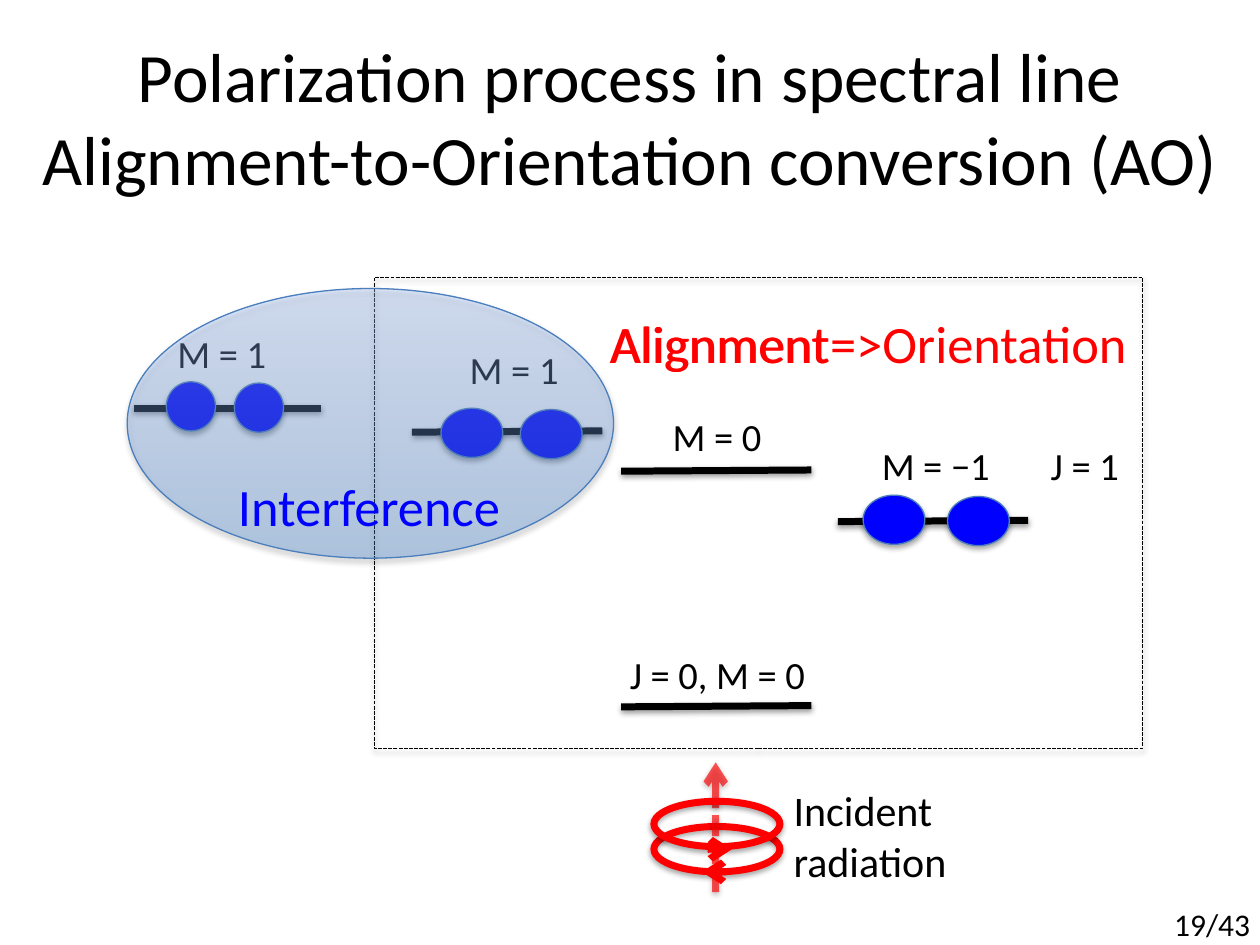
from lxml.etree import SubElement
from pptx import Presentation
from pptx.dml.color import RGBColor
from pptx.enum.dml import MSO_LINE_DASH_STYLE as DASH
from pptx.enum.shapes import MSO_CONNECTOR as CONNECTOR, MSO_SHAPE as SHAPE
from pptx.enum.text import MSO_ANCHOR as ANCHOR, PP_ALIGN as ALIGN
from pptx.oxml.ns import qn
from pptx.util import Inches, Pt

COLUMNS, ROWS = 100, 75
BLACK, RED, BLUE, EDGE = "000000", "FF0000", "0000FF", "4B7EBC"


def cells(*counts):
    """Turn counts of square grid cells into lengths."""
    return [Inches(count * 10 / COLUMNS) for count in counts]


def color(value):
    """Turn a hex string into a colour."""
    return RGBColor.from_string(value)


def add_node(parent, tag, **attributes):
    """Append a drawing element with the given attributes."""
    return SubElement(parent, qn(f"a:{tag}"), {k: str(v) for k, v in attributes.items()})


def add_color(parent, value, opacity):
    """Append a colour with an opacity in percent."""
    add_node(add_node(parent, "srgbClr", val=value), "alpha", val=opacity * 1000)


def set_shadow(shape, opacity=35, distance=23000, visible=True):
    """Give a shape or connector a soft downward shadow, or none."""
    effects = add_node(shape._element.spPr, "effectLst")
    if visible:
        shadow = add_node(effects, "outerShdw", blurRad=40000, dist=distance,
                          dir=5400000, rotWithShape=0)
        add_color(shadow, BLACK, opacity)


def set_line(shape, value, width, dash=None):
    """Set the colour, width and dash of an outline."""
    shape.line.color.rgb = color(value)
    shape.line.width = Pt(width)
    if dash:
        shape.line.dash_style = dash


def add_outline(slide, kind, box, line=EDGE, width=0.75, fill=None, dash=None):
    """Add a shadowed preset shape with an optional solid fill."""
    shape = slide.shapes.add_shape(kind, *cells(*box))
    if fill:
        shape.fill.solid()
        shape.fill.fore_color.rgb = color(fill)
    else:
        shape.fill.background()
    set_line(shape, line, width, dash)
    set_shadow(shape)
    return shape


def add_line(slide, start, end, value=BLACK, dash=None, arrow=False, opacity=100, shadow=True):
    """Add a thick straight connector with an optional arrowhead."""
    line = slide.shapes.add_connector(CONNECTOR.STRAIGHT, *cells(*start, *end))
    set_line(line, value, 4, dash)
    properties = line._element.spPr.find(qn("a:ln"))
    if opacity < 100:
        add_node(properties.find(f".//{qn('a:srgbClr')}"), "alpha", val=opacity * 1000)
    if arrow:
        add_node(properties, "tailEnd", type="arrow")
    set_shadow(line, opacity=38, distance=20000, visible=shadow)


def add_text(slide, text, box, size=22, value=BLACK, align=ALIGN.LEFT,
             anchor=ANCHOR.TOP, wrap=False):
    """Add a text box with one format for all its text."""
    frame = slide.shapes.add_textbox(*cells(*box)).text_frame
    frame.word_wrap = wrap
    frame.vertical_anchor = anchor
    frame.text = text
    for paragraph in frame.paragraphs:
        paragraph.alignment = align
        for run in paragraph.runs:
            run.font.name = "Calibri"
            run.font.size = Pt(size)
            run.font.color.rgb = color(value)


def add_level(slide, left, top, width=15.1, rise=0.1):
    """Add the bar of an energy level."""
    add_line(slide, (left, top), (left + width, top - rise))


def add_populations(slide, left, top, gap, width=4.9, drop=0.1):
    """Add the pair of blue dots that populate a level."""
    for index in range(2):
        box = (left + index * gap, top + index * drop, width, 3.9)
        add_outline(slide, SHAPE.OVAL, box, fill=BLUE)


def add_interference(slide):
    """Add the translucent ellipse around the interfering levels."""
    ellipse = add_outline(slide, SHAPE.OVAL, (10.1, 22.9, 38.6, 21.4))
    properties = ellipse._element.spPr
    gradient = add_node(properties, "gradFill", rotWithShape=1)
    stops = add_node(gradient, "gsLst")
    for position, value in ((0, "3F80CE"), (100, "A4C4FF")):
        add_color(add_node(stops, "gs", pos=position * 1000), value, 32)
    add_node(gradient, "lin", ang=270 * 60000, scaled=0)
    properties.replace(properties.find(qn("a:noFill")), gradient)
    add_text(slide, "Interference", (17.9, 37.1, 23, 6.1), size=30, value=BLUE)


def add_radiation(slide):
    """Add the incident beam with its two circular polarizations."""
    rings = [(51.9, top, 10, 3.6) for top in (65.6, 63.6)]
    add_outline(slide, SHAPE.OVAL, rings[0], line=RED, width=4)
    add_line(slide, (56.8, 70.8), (56.8, 60.5), RED, dash=DASH.SQUARE_DOT,
             arrow=True, opacity=65)
    add_text(slide, "Incident\nradiation", (62, 61.8, 14.3, 9.1), size=24)
    add_outline(slide, SHAPE.OVAL, rings[1], line=RED, width=4)
    for start, end, top in ((56.2, 58.1, 67.4), (57.5, 55.7, 69.2)):
        add_line(slide, (start, top), (end, top), RED, arrow=True, shadow=False)


def main():
    """Build the slide and save it."""
    presentation = Presentation()
    presentation.slide_width, presentation.slide_height = cells(COLUMNS, ROWS)
    slide = presentation.slides.add_slide(presentation.slide_layouts[6])

    add_text(slide, "Polarization process in spectral line\vAlignment-to-Orientation conversion (AO)",
             (0, 3, COLUMNS, 12.5), size=39.6, align=ALIGN.CENTER, anchor=ANCHOR.MIDDLE, wrap=True)
    add_outline(slide, SHAPE.RECTANGLE, (29.7, 22, 61, 37.4), line=BLACK, dash=DASH.SQUARE_DOT)

    for left, top in ((49.3, 56.1), (66.5, 41.4), (49.3, 37.4), (32.7, 34.3)):
        add_level(slide, left, top)
    add_populations(slide, 68.5, 39.3, gap=6.7)
    add_populations(slide, 35, 32.4, gap=6.3)
    add_level(slide, 10.6, 32.4, width=14.9, rise=0)
    add_populations(slide, 13.2, 30.3, gap=5.4, width=3.9)

    for text, left, top, width in (("J = 0, M = 0", 49, 51.2, 22.9), ("M = −1", 69, 34.6, 13.4),
                                   ("M = 0", 52.4, 32.3, 12.3), ("M = 1", 36.3, 27, 11.4),
                                   ("M = 1", 13.1, 25.7, 9.2), ("J = 1", 82.4, 34.6, 9.4)):
        add_text(slide, text, (left, top, width, 4.7))

    add_interference(slide)
    add_radiation(slide)
    add_text(slide, "Alignment=>Orientation", (47.5, 24.2, 43.4, 6.1), size=30, value=RED)
    add_text(slide, "Alignment", (47.4, 24.2, 19.6, 6.1), size=30, value=RED)
    add_text(slide, "19/43", (92.2, 71.3, 8.1, 4), size=18)
    presentation.save("out.pptx")


if __name__ == "__main__":
    main()
